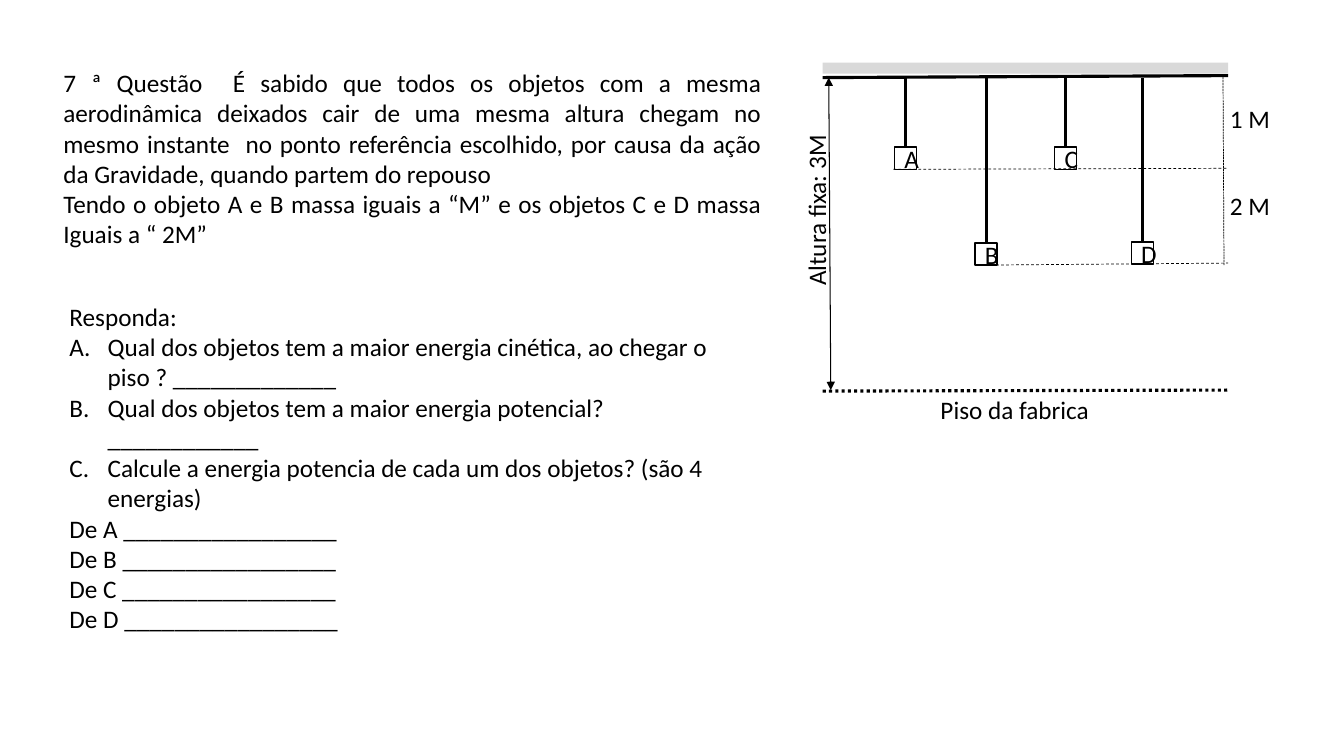
"""Builds a physics question slide about falling objects."""
from lxml import etree
from pptx import Presentation
from pptx.dml.color import RGBColor
from pptx.enum.dml import MSO_LINE
from pptx.enum.shapes import MSO_CONNECTOR, MSO_SHAPE
from pptx.enum.text import MSO_ANCHOR, PP_ALIGN
from pptx.oxml.ns import qn
from pptx.util import Inches, Pt

RECTANGLE = MSO_SHAPE.RECTANGLE
STRAIGHT = MSO_CONNECTOR.STRAIGHT
DOTS, DASHES, SHORT_DASHES = MSO_LINE.ROUND_DOT, MSO_LINE.DASH, MSO_LINE.SQUARE_DOT
LEFT, CENTER, JUSTIFY = PP_ALIGN.LEFT, PP_ALIGN.CENTER, PP_ALIGN.JUSTIFY
MIDDLE = MSO_ANCHOR.MIDDLE
BLACK, WHITE, GRAY = "000000", "FFFFFF", "D9D9D9"

STATEMENT = [
    "7 ª Questão  É sabido que todos os objetos com a mesma aerodinâmica deixados "
    "cair de uma mesma altura chegam no mesmo instante  no ponto referência "
    "escolhido, por causa da ação da Gravidade, quando partem do repouso",
    "Tendo o objeto A e B massa iguais a “M” e os objetos C e D massa Iguais a “ 2M”",
]
QUESTIONS = [
    "Qual dos objetos tem a maior energia cinética, ao chegar o piso ? _____________",
    "Qual dos objetos tem a maior energia potencial?\v____________",
    "Calcule a energia potencia de cada um dos objetos? (são 4 energias)",
]
WEIGHTS = {"A": (0.71, 0.84), "B": (1.51, 1.79), "C": (2.3, 0.84), "D": (3.06, 1.78)}
WEIGHT_SIZE = 0.22


def color(value):
    """Return the colour for a hex string."""
    return RGBColor.from_string(value)


def write(frame, lines, align=LEFT, size=18, font="Calibri", ink=BLACK):
    """Write one paragraph per line and return the paragraphs."""
    frame.word_wrap = True
    frame.text = "\n".join(lines)
    for para in frame.paragraphs:
        para.alignment = align
        for span in para.runs:
            span.font.name, span.font.size = font, Pt(size)
            span.font.color.rgb = color(ink)
    return frame.paragraphs


def add_text(page, lines, left, top, width, height, rotation=0, **style):
    """Add a text box and return its paragraphs."""
    box = page.shapes.add_textbox(*map(Inches, (left, top, width, height)))
    box.rotation = rotation
    return write(box.text_frame, lines, **style)


def add_rectangle(page, left, top, width, height, fill, outline=None):
    """Add a flat rectangle, outlined only when a colour is given."""
    box = page.shapes.add_shape(RECTANGLE, *map(Inches, (left, top, width, height)))
    box.shadow.inherit = False
    box.fill.solid()
    box.fill.fore_color.rgb = color(fill)
    if outline:
        box.line.color.rgb = color(outline)
        box.line.width = Pt(1)
    else:
        box.line.fill.background()
    return box


def add_line(page, start, end, weight, dash=None, arrows=False):
    """Add a black line, with arrowheads at both ends when asked."""
    line = page.shapes.add_connector(STRAIGHT, *map(Inches, (*start, *end)))
    line.line.color.rgb = color(BLACK)
    line.line.width = Pt(weight)
    if dash:
        line.line.dash_style = dash
    if arrows:
        for name in ("a:headEnd", "a:tailEnd"):
            etree.SubElement(line.get_or_add_ln(), qn(name), type="triangle")
    etree.SubElement(line.element.spPr, qn("a:effectLst"))


def number_paragraph(para):
    """Give a paragraph a hanging capital letter."""
    properties = para._p.get_or_add_pPr()
    properties.set("marL", str(Inches(0.38)))
    properties.set("indent", str(-Inches(0.38)))
    etree.SubElement(properties, qn("a:buFont"), typeface="+mj-lt")
    etree.SubElement(properties, qn("a:buAutoNum"), type="alphaUcPeriod")


def add_question(page, left, top, width):
    """Add the statement with the questions and answer lines below it."""
    add_text(page, STATEMENT, left, top, width, 1.92, align=JUSTIFY)
    answers = [f"De {name} {'_' * 17}" for name in WEIGHTS]
    paras = add_text(page, ["Responda:", *QUESTIONS, *answers],
                     left + 0.06, top + 2.32, width, 3.43)
    for para in paras[1:1 + len(QUESTIONS)]:
        number_paragraph(para)


def add_diagram(page, left, top, width):
    """Draw the weights hanging from the ceiling, with their heights."""
    def at(x, y):
        return left + x, top + y

    add_line(page, at(0, 0.15), at(width, 0.13), 2.25)
    add_rectangle(page, left, top, width, 0.11, GRAY)
    for name, (x, y) in WEIGHTS.items():
        middle = x + WEIGHT_SIZE / 2
        add_line(page, at(middle, y), at(middle, 0.15), 2.25)
        box = add_rectangle(page, *at(x, y), WEIGHT_SIZE, WEIGHT_SIZE, WHITE, BLACK)
        box.text_frame.vertical_anchor = MIDDLE
        write(box.text_frame, [name], align=CENTER)

    add_line(page, at(0, 3.26), at(width, 3.25), 2.25, DOTS)
    add_line(page, at(0.06, 0.15), at(0.08, 3.25), 0.75, arrows=True)
    add_line(page, at(0.7, 1.06), at(width, 1.05), 0.5, DASHES)
    add_line(page, at(1.62, 2.01), at(width, 1.99), 0.5, DASHES)
    add_line(page, at(3.98, 2.01), at(3.97, 0.13), 0.5, SHORT_DASHES)

    add_text(page, ["Altura fixa: 3M"], *at(-0.94, 1.24), 1.75, 0.4, rotation=270)
    add_text(page, ["Piso da fabrica"], *at(1.07, 3.24), 1.74, 0.4)
    for label, y in (("1 M", 0.36), ("2 M", 1.22)):
        add_text(page, [label], *at(3.94, y), 0.64, 0.4)


def main():
    """Build and save the deck."""
    deck = Presentation()
    deck.slide_width, deck.slide_height = Inches(13.33), Inches(7.5)
    page = deck.slides.add_slide(deck.slide_layouts[6])
    add_diagram(page, 8.16, 0.62, 4.02)
    add_question(page, 0.53, 0.62, 7.12)
    deck.save("out.pptx")


if __name__ == "__main__":
    main()
